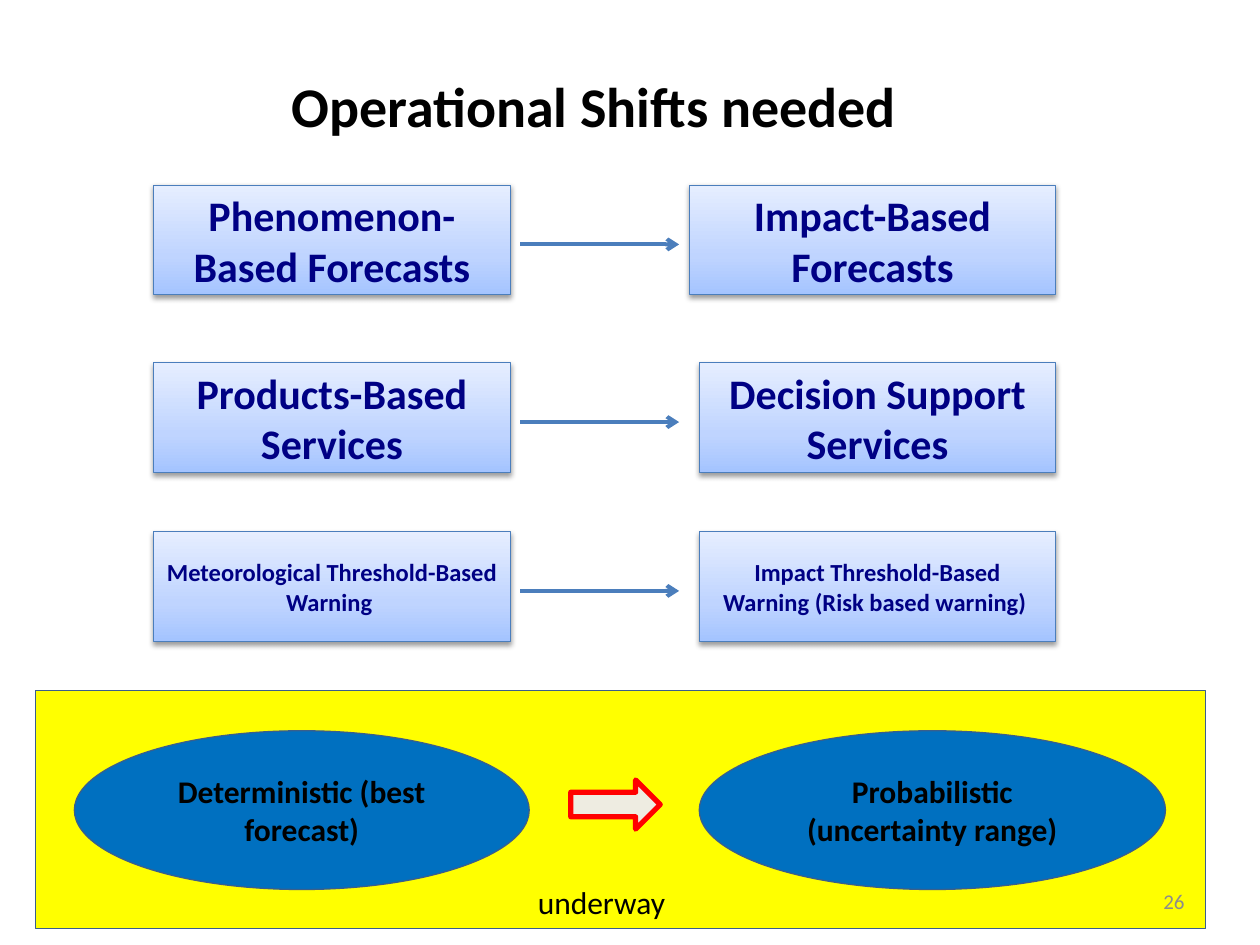
from dataclasses import dataclass

from lxml import etree
from pptx import Presentation
from pptx.dml.color import RGBColor
from pptx.enum.shapes import MSO_CONNECTOR, MSO_SHAPE
from pptx.enum.text import MSO_ANCHOR, PP_ALIGN
from pptx.oxml.ns import qn
from pptx.util import Inches, Pt

RECT, OVAL, ARROW = MSO_SHAPE.RECTANGLE, MSO_SHAPE.OVAL, MSO_SHAPE.RIGHT_ARROW
LINE = MSO_CONNECTOR.STRAIGHT
LEFT, MID, RIGHT = PP_ALIGN.LEFT, PP_ALIGN.CENTER, PP_ALIGN.RIGHT
TOP, CENTER = MSO_ANCHOR.TOP, MSO_ANCHOR.MIDDLE


@dataclass(frozen=True)
class Theme:
    font: str = "Calibri"
    back: str = "FFFFFF"
    ink: str = "000000"
    navy: str = "000084"
    edge: str = "4B7EBC"
    rim: str = "3A5F8C"
    band: str = "FFFF00"
    oval: str = "0070C0"
    arrow: str = "EEECE1"
    alert: str = "FF0000"
    grey: str = "8C8C8C"
    fade: tuple = ((0, "A4C4FF"), (35, "BFD4FF"), (100, "E6EEFF"))
    head: int = 32
    large: int = 24
    body: int = 18
    small: int = 14
    note: int = 12


THEME = Theme()
ROWS = (
    (1.47, 5.47, THEME.large, "Phenomenon-Based Forecasts", "Impact-Based Forecasts"),
    (2.88, 5.55, THEME.large, "Products-Based Services", "Decision Support Services"),
    (4.22, 5.55, THEME.small, "Meteorological Threshold-Based Warning ",
     "Impact Threshold-Based Warning (Risk based warning) "),
)


def color(code):
    return RGBColor.from_string(code)


def node(parent, tag, **attrs):
    return etree.SubElement(parent, qn(tag), {k: str(v) for k, v in attrs.items()})


def write(shape, text, size, ink, bold=False, align=MID, anchor=CENTER):
    frame = shape.text_frame
    frame.word_wrap = True
    frame.vertical_anchor = anchor
    para = frame.paragraphs[0]
    para.alignment = align
    run = para.add_run()
    run.text = text
    font = run.font
    font.name, font.size, font.bold = THEME.font, Pt(size), bold
    font.color.rgb = color(ink)


def label(slide, box, text, size, ink, **style):
    shape = slide.shapes.add_textbox(*map(Inches, box))
    write(shape, text, size, ink, **style)


def block(slide, kind, box, fill, line, width=0.75):
    shape = slide.shapes.add_shape(kind, *map(Inches, box))
    shape.shadow.inherit = False
    if fill:
        shape.fill.solid()
        shape.fill.fore_color.rgb = color(fill)
    shape.line.color.rgb = color(line)
    shape.line.width = Pt(width)
    return shape


def shade(shape):
    """Give a card its three-stop gradient and its soft shadow."""
    shape.fill.gradient()
    shape.fill.gradient_angle = 90
    props = shape.element.spPr
    stops = props.find(".//" + qn("a:gsLst"))
    for stop in list(stops):
        stops.remove(stop)
    for place, code in THEME.fade:
        node(node(stops, "a:gs", pos=place * 1000), "a:srgbClr", val=code)
    glow = node(props.find(qn("a:effectLst")), "a:outerShdw", blurRad=Pt(3.1),
                dist=Pt(1.6), dir=5400000, rotWithShape=0)
    node(node(glow, "a:srgbClr", val=THEME.ink), "a:alpha", val=38000)


def card(slide, box, text, size):
    shape = block(slide, RECT, box, None, THEME.edge)
    shade(shape)
    write(shape, text, size, THEME.navy, bold=True)


def link(slide, start, end, y):
    line = slide.shapes.add_connector(
        LINE, Inches(start), Inches(y), Inches(end), Inches(y))
    line.line.color.rgb = color(THEME.edge)
    line.line.width = Pt(2.25)
    props = line.element.spPr
    node(props.find(qn("a:ln")), "a:tailEnd", type="arrow")
    node(props, "a:effectLst")


def title(slide, box, text):
    shape = slide.shapes.title
    shape.left, shape.top, shape.width, shape.height = map(Inches, box)
    write(shape, text, THEME.head, THEME.ink, bold=True, anchor=TOP)


def shift(slide, box, split, size, old, new):
    """Draw one row: old way, arrow, new way starting at split."""
    x, y, w, h = box
    wide = 2.83
    card(slide, (x, y, wide, h), old, size)
    card(slide, (split, y, x + w - split, h), new, size)
    link(slide, x + wide + 0.08, 5.39, y + 0.47)


def panel(slide, box):
    x, y, w, h = box
    block(slide, RECT, box, THEME.band, THEME.rim)
    for dx, wide, text in ((0.31, 3.61, "Deterministic (best forecast)"),
                           (5.27, 3.7, "Probabilistic (uncertainty range)")):
        oval = block(slide, OVAL, (x + dx, y + 0.32, wide, 1.26),
                     THEME.oval, THEME.rim)
        write(oval, text, THEME.body, THEME.ink, bold=True)
    block(slide, ARROW, (x + 4.25, y + 0.71, 0.71, 0.39),
          THEME.arrow, THEME.alert, 3)
    label(slide, (x + 3.89, y + 1.48, 1.5, 0.4), "underway", THEME.body,
          THEME.ink, align=LEFT, anchor=TOP)
    label(slide, (x + 6.89, y + 1.47, 2.33, 0.4), "26", THEME.note,
          THEME.grey, align=RIGHT)


def main():
    deck = Presentation()
    deck.slide_width, deck.slide_height = Inches(10), Inches(7.5)
    slide = deck.slides.add_slide(deck.slide_layouts[5])
    slide.background.fill.solid()
    slide.background.fill.fore_color.rgb = color(THEME.back)
    title(slide, (1.85, 0.52, 5.83, 0.64), "Operational Shifts needed ")
    for top, split, size, old, new in ROWS:
        shift(slide, (1.22, top, 7.16, 0.87), split, size, old, new)
    panel(slide, (0.28, 5.48, 9.29, 1.89))
    deck.save("out.pptx")


if __name__ == "__main__":
    main()
